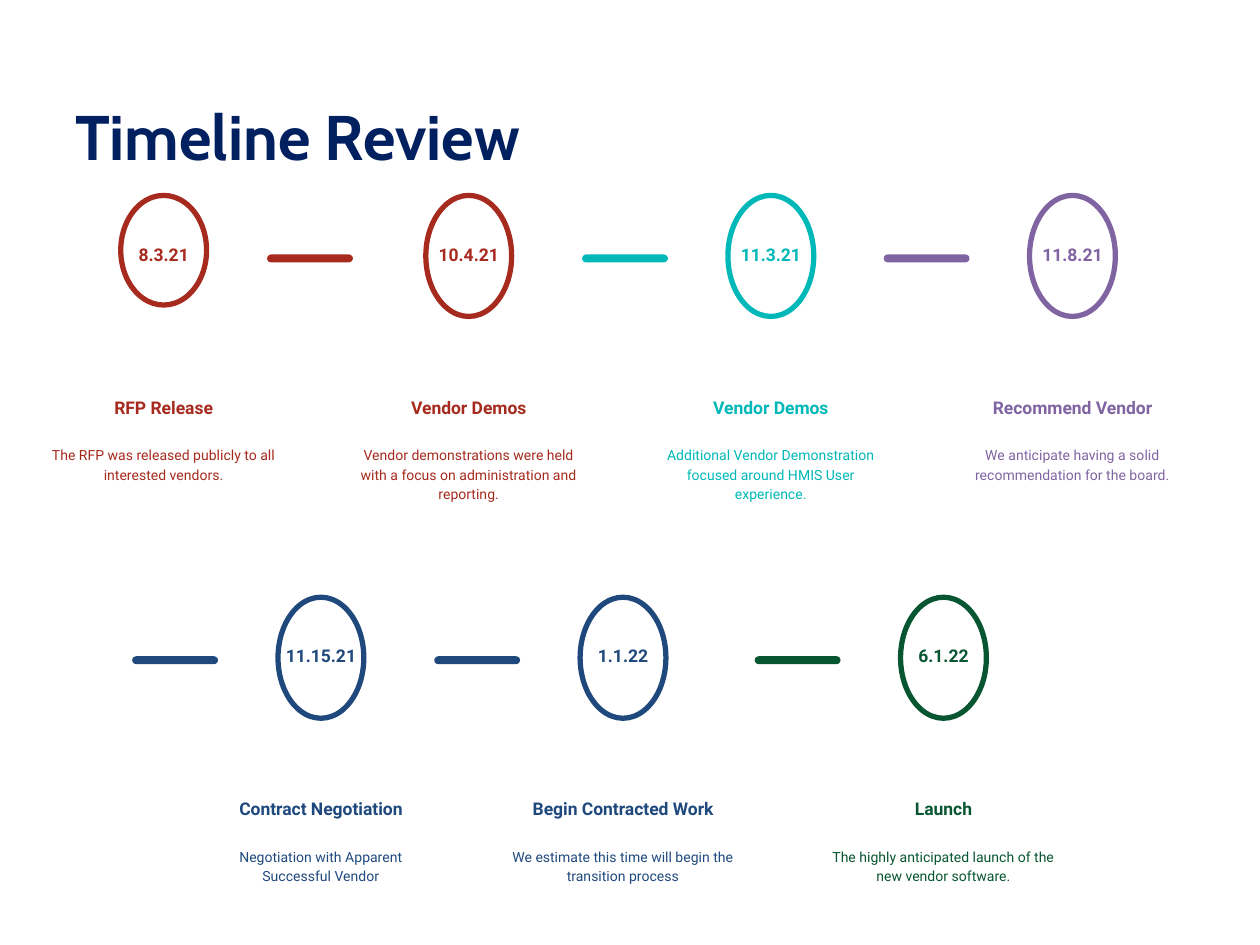
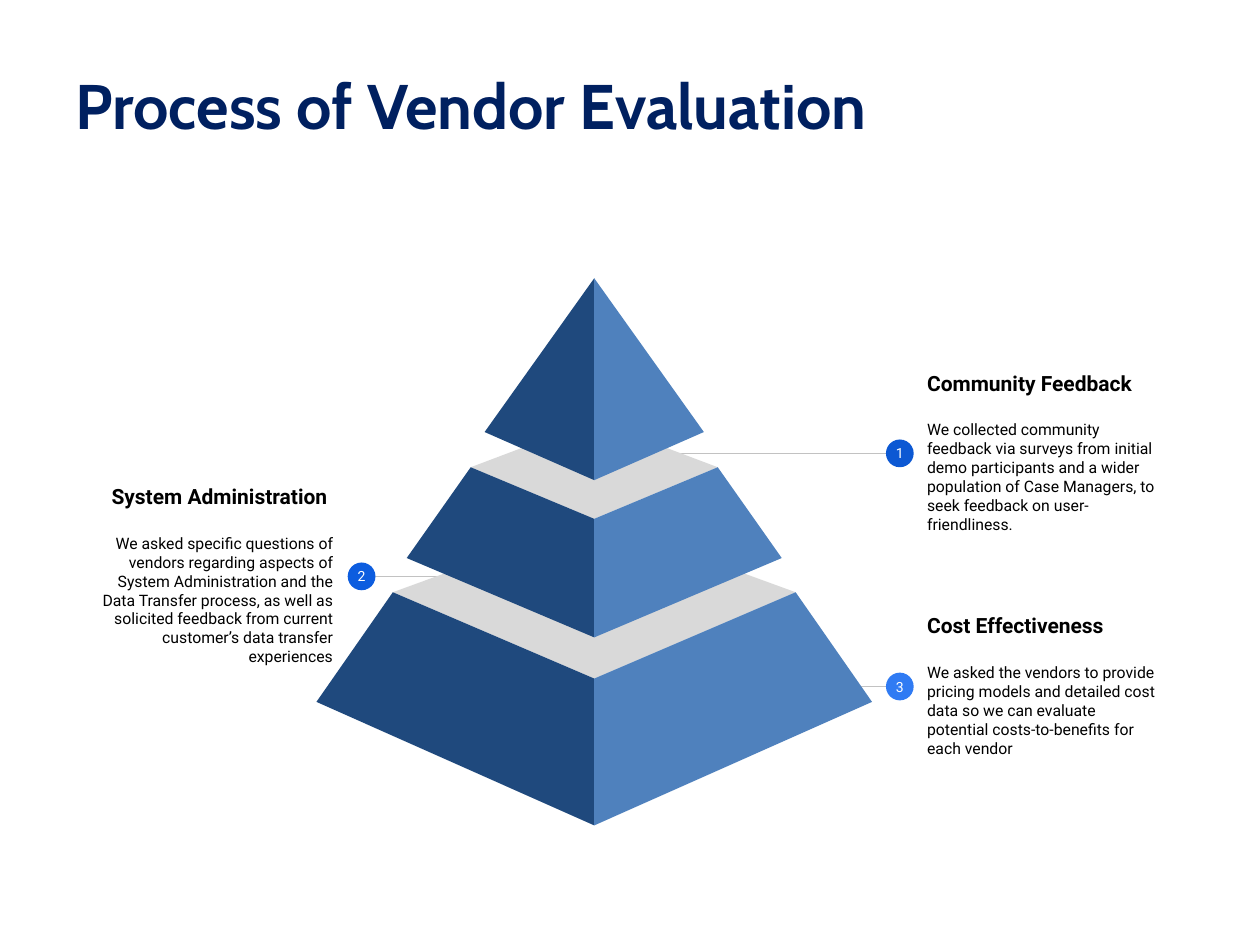
from dataclasses import dataclass

from lxml import etree
from pptx import Presentation
from pptx.dml.color import RGBColor
from pptx.enum import shapes, text
from pptx.oxml import ns
from pptx.util import Cm, Pt


@dataclass(frozen=True)
class Theme:
    title_font: str = "Cabin"
    body_font: str = "Roboto"
    title_size: int = 36
    callout_heading_size: int = 12
    callout_size: int = 9
    milestone_size: int = 10
    small_size: int = 8
    title: str = "002060"
    red: str = "A72A1E"
    teal: str = "00B8B8"
    purple: str = "8064A2"
    navy: str = "1F497D"
    green: str = "085631"
    steel: str = "4F81BD"
    lid: str = "D9D9D9"
    rule: str = "C2C2C2"
    black: str = "000000"
    white: str = "FFFFFF"


theme = Theme()
LEFT, CENTER, RIGHT = text.PP_ALIGN.LEFT, text.PP_ALIGN.CENTER, text.PP_ALIGN.RIGHT
TOP, MIDDLE, BOTTOM = (
    text.MSO_ANCHOR.TOP, text.MSO_ANCHOR.MIDDLE, text.MSO_ANCHOR.BOTTOM)


def write(shape, *lines, size, color, font=theme.body_font, bold=False, align=LEFT,
          anchor=TOP, spacing=1.0, inset=(0.25, 0.25), heading_size=None, gap=0):
    """Fill a shape with paragraphs; heading_size makes the first a bold heading."""
    frame = shape.text_frame
    frame.word_wrap = True
    frame.auto_size = text.MSO_AUTO_SIZE.NONE
    frame.vertical_anchor = anchor
    frame.margin_left = frame.margin_right = Cm(inset[0])
    frame.margin_top = frame.margin_bottom = Cm(inset[1])
    for index, line in enumerate(lines):
        paragraph = frame.paragraphs[0] if index == 0 else frame.add_paragraph()
        is_heading = index == 0 and heading_size is not None
        paragraph.text = line
        paragraph.alignment = align
        paragraph.line_spacing = spacing
        paragraph.space_after = Pt(gap if is_heading else 0)
        paragraph.font.name = font
        paragraph.font.size = Pt(heading_size if is_heading else size)
        paragraph.font.bold = bold or is_heading
        paragraph.font.color.rgb = RGBColor.from_string(color)


def paint(shape, fill=None, line=None, width=3):
    shape.shadow.inherit = False
    if fill:
        shape.fill.solid()
        shape.fill.fore_color.rgb = RGBColor.from_string(fill)
    else:
        shape.fill.background()
    if line:
        shape.line.color.rgb = RGBColor.from_string(line)
        shape.line.width = Pt(width)
    else:
        shape.line.fill.background()


presentation = Presentation()
presentation.slide_width = Cm(25.4)
presentation.slide_height = Cm(19.05)

slides = []
for title, top, spacing in (
    ("Timeline Review", 0.76, 1.5),
    ("Process of Vendor Evaluation", 0.51, 1.0),
):
    slide = presentation.slides.add_slide(presentation.slide_layouts[5])
    placeholder = slide.shapes.title
    placeholder.left, placeholder.top = Cm(1.27), Cm(top)
    placeholder.width, placeholder.height = Cm(22.86), Cm(3.18)
    write(placeholder, title, size=theme.title_size, color=theme.title,
          font=theme.title_font, bold=True, anchor=MIDDLE, spacing=spacing,
          inset=(0.25, 0.13))
    slides.append(slide)
timeline, evaluation = slides

# Timeline: centre, row top, oval height, distance back to the dash, colour, texts
ROW_1, ROW_2 = 3.94, 12.04
OVAL_WIDTH, DASH_HEIGHT = 1.73, 0.16
milestones = (
    (3.30, ROW_1, 2.21, None, theme.red, "8.3.21", "RFP Release",
     "The RFP was released publicly to all interested vendors."),
    (9.45, ROW_1, 2.44, 3.20, theme.red, "10.4.21", "Vendor Demos",
     "Vendor demonstrations were held with a focus on administration and reporting."),
    (15.54, ROW_1, 2.44, 2.94, theme.teal, "11.3.21", "Vendor Demos",
     "Additional Vendor Demonstration focused around HMIS User experience."),
    (21.62, ROW_1, 2.44, 2.94, theme.purple, "11.8.21", "Recommend Vendor",
     "We anticipate having a solid recommendation for the board."),
    (6.47, ROW_2, 2.44, 2.94, theme.navy, "11.15.21", "Contract Negotiation",
     "Negotiation with Apparent Successful Vendor"),
    (12.56, ROW_2, 2.44, 2.94, theme.navy, "1.1.22", "Begin Contracted Work",
     "We estimate this time will begin the transition process"),
    (19.02, ROW_2, 2.44, 2.94, theme.green, "6.1.22", "Launch",
     "The highly anticipated launch of the new vendor software."),
)
for center, top, oval_height, dash_back, color, date, heading, detail in milestones:
    oval_left = center - OVAL_WIDTH / 2
    if dash_back:
        dash = timeline.shapes.add_shape(
            shapes.MSO_SHAPE.ROUNDED_RECTANGLE, Cm(oval_left - dash_back),
            Cm(top + 1.19), Cm(OVAL_WIDTH), Cm(DASH_HEIGHT))
        dash.adjustments[0] = 0.5
        paint(dash, fill=color)
    oval = timeline.shapes.add_shape(
        shapes.MSO_SHAPE.OVAL, Cm(oval_left), Cm(top), Cm(OVAL_WIDTH), Cm(oval_height))
    paint(oval, line=color)
    for words, drop, width, height, size, bold, anchor, side_inset in (
        (date, 0.66, OVAL_WIDTH, 1.32, theme.milestone_size, True, TOP, 0),
        (heading, 2.90, 5.00, 1.83, theme.milestone_size, True, BOTTOM, 0.25),
        (detail, 4.77, 5.13, 3.02, theme.small_size, False, TOP, 0.25),
    ):
        box = timeline.shapes.add_textbox(
            Cm(center - width / 2), Cm(top + drop), Cm(width), Cm(height))
        write(box, words, size=size, color=color, bold=bold, align=CENTER,
              anchor=anchor, spacing=1.15, inset=(side_inset, 0.25))

# Callouts: number, line start, badge centre, height, text left, align, badge colour
BADGE = 0.56
callouts = (
    ("3", 16.76, 18.14, 13.84, 18.44, LEFT, "307BF3", "Cost Effectiveness",
     "We asked the vendors to provide pricing models and detailed cost data so we can "
     "evaluate potential costs-to-benefits for each vendor"),
    ("2", 10.08, 7.29, 11.62, 1.78, RIGHT, "0D5DDF", "System Administration ",
     "We asked specific questions of vendors regarding aspects of System Administration "
     "and the Data Transfer process, as well as solicited feedback from current "
     "customer’s data transfer experiences"),
    ("1", 13.64, 18.14, 9.14, 18.44, LEFT, "0C58D3", "Community Feedback",
     "We collected community feedback via surveys from initial demo participants and a "
     "wider population of Case Managers, to seek feedback on user-friendliness."),
)
for number, start, center, y, text_left, align, color, heading, detail in callouts:
    leader = evaluation.shapes.add_connector(
        shapes.MSO_CONNECTOR.STRAIGHT, Cm(start), Cm(y), Cm(center), Cm(y))
    leader.line.color.rgb = RGBColor.from_string(theme.rule)
    leader.line.width = Pt(0.75)
    etree.SubElement(leader._element.spPr, ns.qn("a:effectLst"))

    box = evaluation.shapes.add_textbox(
        Cm(text_left), Cm(y - 1.95), Cm(5.18), Cm(3.84))
    write(box, heading, detail, size=theme.callout_size, color=theme.black, align=align,
          anchor=MIDDLE, heading_size=theme.callout_heading_size, gap=14)

    badge = evaluation.shapes.add_shape(
        shapes.MSO_SHAPE.OVAL, Cm(center - BADGE / 2), Cm(y - BADGE / 2),
        Cm(BADGE), Cm(BADGE))
    paint(badge, fill=color)
    write(badge, number, size=theme.small_size, color=theme.white, align=CENTER,
          anchor=MIDDLE, inset=(0, 0))

# Pyramid tiers, bottom to top: half widths, then heights of the corners and the front edge
AXIS = 11.98
tiers = (
    # upper half, lower half, back, upper corner, upper front, lower corner, lower front
    (4.06, 5.60, 10.46, 11.94, 13.68, 14.15, 16.64),
    (2.49, 3.78, 8.48, 9.42, 10.46, 11.25, 12.85),
    (0, 2.21, 5.61, 5.61, 5.61, 8.71, 9.68),
)
for upper, lower, back, upper_corner, upper_front, lower_corner, lower_front in tiers:
    facets = []
    if upper:
        facets.append((theme.lid, (
            (AXIS - upper, upper_corner), (AXIS, upper_front),
            (AXIS + upper, upper_corner), (AXIS, back))))
    for side, color in ((-1, theme.navy), (1, theme.steel)):
        facets.append((color, (
            (AXIS + side * upper, upper_corner), (AXIS + side * lower, lower_corner),
            (AXIS, lower_front), (AXIS, upper_front))))
    for color, corners in facets:
        points = [(Cm(x), Cm(y)) for x, y in corners]
        builder = evaluation.shapes.build_freeform(*points[0])
        builder.add_line_segments(points[1:], close=True)
        paint(builder.convert_to_shape(), fill=color)

presentation.save("out.pptx")
